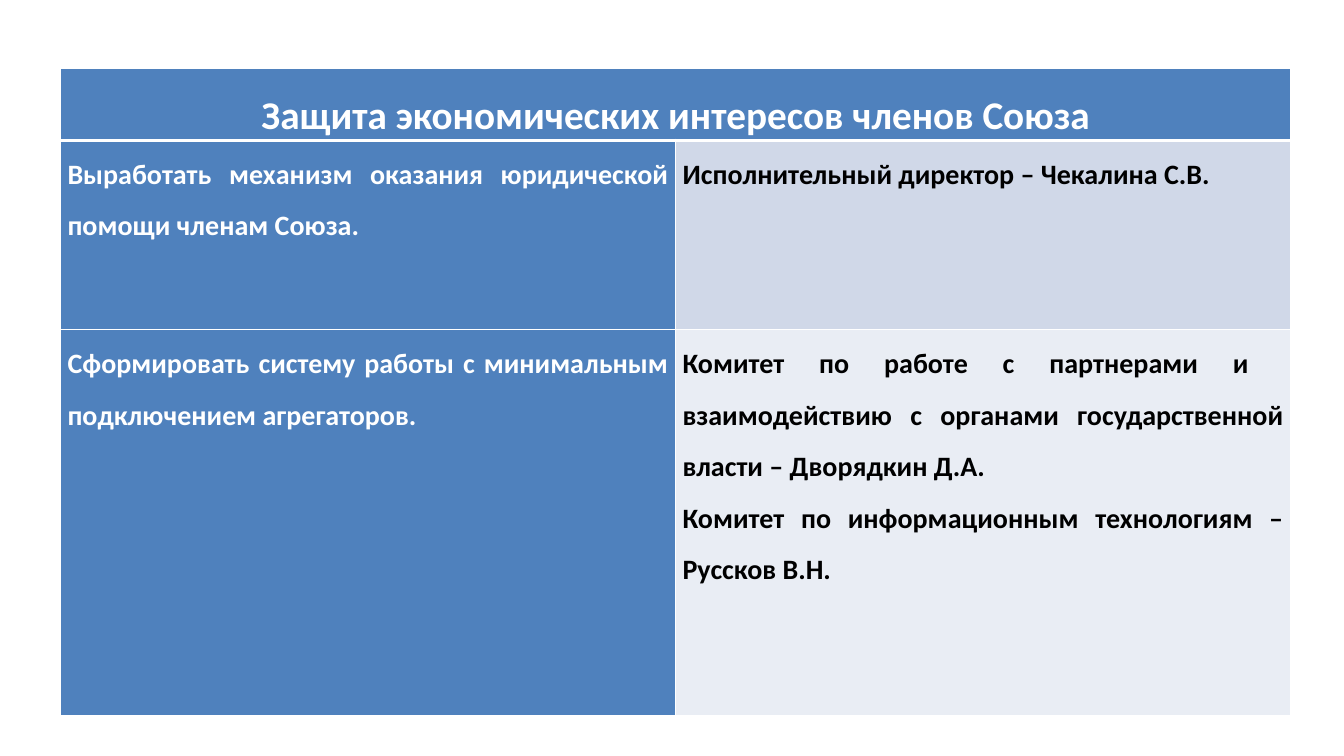
from lxml import etree
from pptx import Presentation
from pptx import util as u
from pptx.dml.color import RGBColor
from pptx.enum import text
from pptx.oxml import ns

WIDTH, HEIGHT = 13.33, 7.5
LEFT, TOP = 0.6, 0.68
COLUMN_WIDTH = 6.1
ROW_HEIGHTS = (0.58, 1.88, 3.83)
BLUE, WHITE, BLACK = "4F81BD", "FFFFFF", "000000"

HEADING = "Защита экономических интересов членов Союза"
TASKS = [
    ("Выработать механизм оказания юридической помощи членам Союза.",
     ["Исполнительный директор – Чекалина С.В. "], "D0D8E8"),
    ("Сформировать систему работы с минимальным подключением агрегаторов.",
     ["Комитет по работе с партнерами и  взаимодействию с органами "
      "государственной власти – Дворядкин Д.А.",
      "Комитет по информационным технологиям – Руссков В.Н."], "E9EDF4"),
]


def color(value):
    return RGBColor.from_string(value)


def add_borders(cell, bottom=1):
    """Draw white lines round a cell; must precede its fill in the XML."""
    properties = cell._tc.get_or_add_tcPr()
    for side, points in (("L", 1), ("R", 1), ("T", 1), ("B", bottom)):
        line = etree.SubElement(properties, ns.qn(f"a:ln{side}"), w=str(u.Pt(points)))
        fill = etree.SubElement(line, ns.qn("a:solidFill"))
        etree.SubElement(fill, ns.qn("a:srgbClr"), val=WHITE)


def fill_cell(cell, background):
    cell.fill.solid()
    cell.fill.fore_color.rgb = color(background)


def write_cell(cell, paragraphs, font_color, size=20, align=text.PP_ALIGN.JUSTIFY):
    cell.margin_left = cell.margin_right = u.Inches(0.07)
    cell.margin_top = cell.margin_bottom = 0
    cell.text_frame.text = "\n".join(paragraphs)
    for para in cell.text_frame.paragraphs:
        para.alignment = align
        para.line_spacing = 1.5
        para.font.name = "Calibri"
        para.font.size = u.Pt(size)
        para.font.bold = True
        para.font.color.rgb = color(font_color)


def add_plan_table(page):
    frame = page.shapes.add_table(
        len(ROW_HEIGHTS), 2, u.Inches(LEFT), u.Inches(TOP),
        u.Inches(2 * COLUMN_WIDTH), u.Inches(sum(ROW_HEIGHTS)))
    table = frame.table
    for column in table.columns:
        column.width = u.Inches(COLUMN_WIDTH)
    for row, height in zip(table.rows, ROW_HEIGHTS):
        row.height = u.Inches(height)
    for index, row in enumerate(table.rows):
        for cell in row.cells:
            add_borders(cell, bottom=1 if index else 3)
            fill_cell(cell, BLUE)

    heading = table.cell(0, 0)
    heading.merge(table.cell(0, 1))
    write_cell(heading, [HEADING], WHITE, 28, text.PP_ALIGN.CENTER)
    for index, (task, owners, tint) in enumerate(TASKS, start=1):
        write_cell(table.cell(index, 0), [task], WHITE)
        write_cell(table.cell(index, 1), owners, BLACK)
        fill_cell(table.cell(index, 1), tint)


def main():
    deck = Presentation()
    deck.slide_width, deck.slide_height = u.Inches(WIDTH), u.Inches(HEIGHT)
    page = deck.slides.add_slide(deck.slide_layouts[6])
    add_plan_table(page)
    deck.save("out.pptx")


if __name__ == "__main__":
    main()
